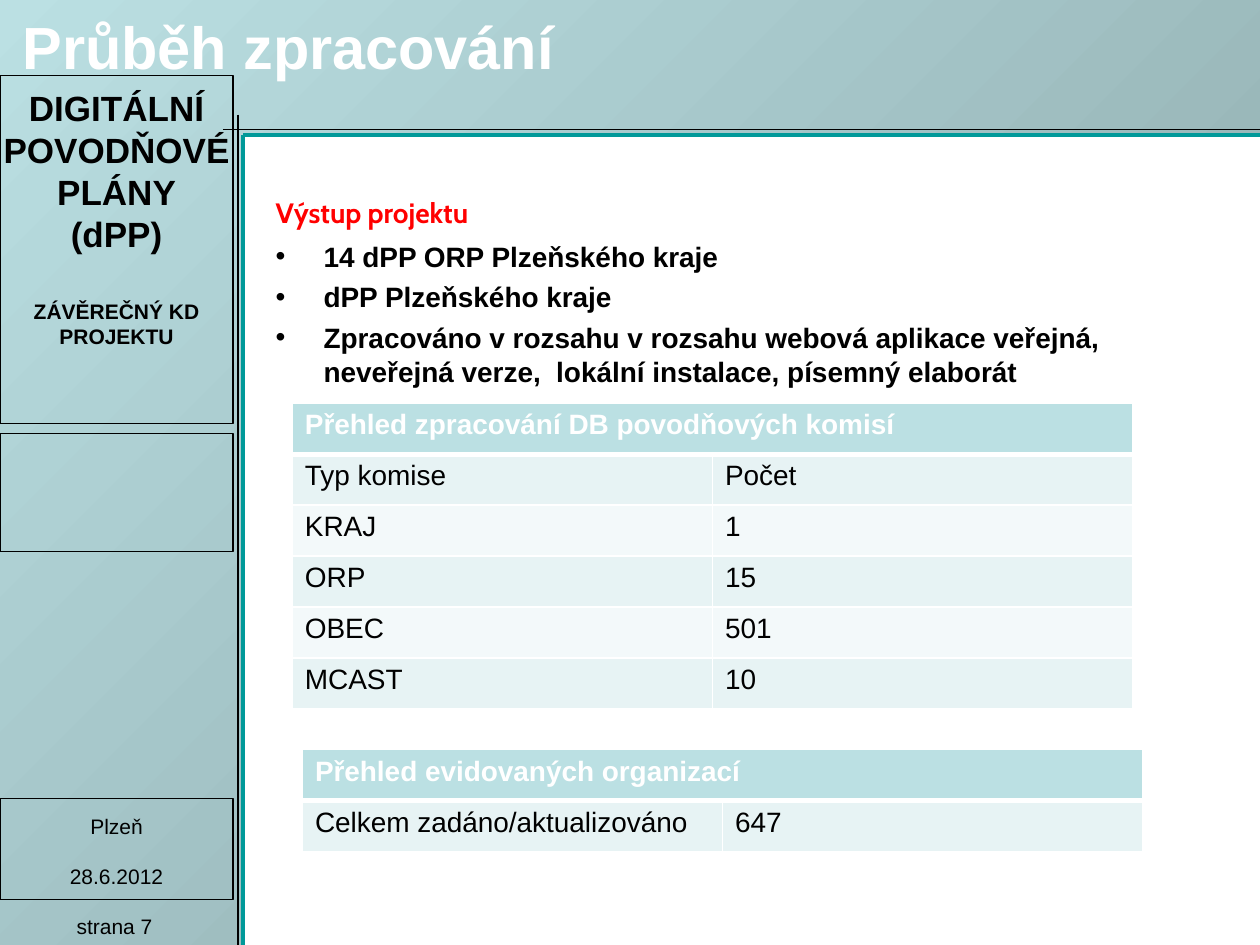
from lxml import etree
from pptx import Presentation
from pptx.dml.color import RGBColor
from pptx.enum.shapes import MSO_CONNECTOR, MSO_SHAPE
from pptx.enum.text import PP_ALIGN
from pptx.oxml.ns import qn
from pptx.util import Inches, Pt

STRAIGHT = MSO_CONNECTOR.STRAIGHT
RECTANGLE = MSO_SHAPE.RECTANGLE
CENTER = PP_ALIGN.CENTER

BLACK = RGBColor(0x00, 0x00, 0x00)
WHITE = RGBColor(0xFF, 0xFF, 0xFF)
RED = RGBColor(0xFF, 0x00, 0x00)
TEAL = RGBColor(0x00, 0x99, 0x99)
AQUA = RGBColor(0xBB, 0xE0, 0xE3)
SLATE = RGBColor(0x86, 0xA0, 0xA2)
BAND_DARK = RGBColor(0xE7, 0xF3, 0xF4)
BAND_LIGHT = RGBColor(0xF3, 0xF9, 0xFA)

FRAME_OUTLINE = [(-0.04, 7.53), (1.93, 7.53), (1.93, 1.08),
                 (10.04, 1.08), (10.04, -0.03), (-0.04, -0.03)]
RULES = [
    (1.93, 7.5, 1.93, 1.07, TEAL, 2.25),
    (1.93, 1.07, 10, 1.07, TEAL, 2.25),
    (1.89, 0.91, 1.89, 7.5, BLACK, 0.75),
    (1.77, 1.03, 10, 1.03, BLACK, 0.75),
]
SIDE_BOXES = [(0.6, 2.76), (3.44, 0.94), (6.34, 0.8)]

HEADING = {"size": Pt(20), "bold": True}
SUBHEADING = {"size": Pt(12), "bold": True}
SMALL = {"size": Pt(12)}
TITLE = {"size": Pt(34), "bold": True, "color": WHITE}
OUTPUT = {"size": Pt(16), "bold": True, "name": "Cabin", "color": RED}
BULLET = {"size": Pt(16), "bold": True}
CELL = {"size": Pt(16)}
HEADER_CELL = {"size": Pt(16), "bold": True, "color": WHITE}

COMMISSIONS = [
    ("Přehled zpracování DB povodňových komisí", ""),
    ("Typ komise", "Počet"),
    ("KRAJ", "1"),
    ("ORP", "15"),
    ("OBEC", "501"),
    ("MCAST", "10"),
]
ORGANIZATIONS = [
    ("Přehled evidovaných organizací", ""),
    ("Celkem zadáno/aktualizováno", "647"),
]
BULLETS = [
    "14 dPP ORP Plzeňského kraje",
    "dPP Plzeňského kraje",
    "Zpracováno v rozsahu v rozsahu webová aplikace veřejná, "
    "neveřejná verze,  lokální instalace, písemný elaborát",
]


def format_font(font, values):
    settings = {"name": "Arial", "color": BLACK, **values}
    font.color.rgb = settings.pop("color")
    for name, value in settings.items():
        setattr(font, name, value)


def add_bullet(paragraph):
    properties = paragraph._p.get_or_add_pPr()
    properties.set("marL", str(Inches(0.38)))
    properties.set("indent", str(-Inches(0.38)))
    etree.SubElement(properties, qn("a:buFont"), typeface="Arial")
    etree.SubElement(properties, qn("a:buChar"), char="•")


def add_text(slide, box, items, margin_top=0.05, wrap=True):
    shape = slide.shapes.add_textbox(*map(Inches, box))
    frame = shape.text_frame
    frame.word_wrap = wrap
    frame.margin_top = Inches(margin_top)
    for index, (text, font, layout) in enumerate(items):
        paragraph = frame.paragraphs[0] if index == 0 else frame.add_paragraph()
        settings = dict(layout)
        if settings.pop("bullet", False):
            add_bullet(paragraph)
        for name, value in settings.items():
            setattr(paragraph, name, value)
        run = paragraph.add_run()
        run.text = text
        format_font(run.font, font)


def add_frame(slide):
    points = [(Inches(x), Inches(y)) for x, y in FRAME_OUTLINE]
    builder = slide.shapes.build_freeform(*points[0])
    builder.add_line_segments(points[1:], close=True)
    shape = builder.convert_to_shape()
    shape.shadow.inherit = False
    shape.line.fill.background()
    shape.fill.gradient()
    shape.fill.gradient_angle = 315
    for stop, color, position in zip(shape.fill.gradient_stops, (AQUA, SLATE), (0, 1)):
        stop.color.rgb = color
        stop.position = position


def add_rule(slide, x1, y1, x2, y2, color, width):
    ends = map(Inches, (x1, y1, x2, y2))
    connector = slide.shapes.add_connector(STRAIGHT, *ends)
    connector.line.color.rgb = color
    connector.line.width = Pt(width)
    etree.SubElement(connector._element.spPr, qn("a:effectLst"))


def add_side_box(slide, top, height):
    shape = slide.shapes.add_shape(RECTANGLE, 0, Inches(top), Inches(1.85), Inches(height))
    shape.shadow.inherit = False
    shape.fill.background()
    shape.line.color.rgb = BLACK
    shape.line.width = Pt(0.75)


def add_borders(cell, top, bottom):
    properties = cell._tc.get_or_add_tcPr()
    for side, width in {"lnL": 1, "lnR": 1, "lnT": top, "lnB": bottom}.items():
        line = etree.SubElement(properties, qn(f"a:{side}"), w=str(Pt(width)))
        fill = etree.SubElement(line, qn("a:solidFill"))
        etree.SubElement(fill, qn("a:srgbClr"), val=str(WHITE))


def add_summary_table(slide, box, rows):
    table = slide.shapes.add_table(len(rows), 2, *map(Inches, box)).table
    table.first_row = False
    table.horz_banding = False
    table.cell(0, 0).merge(table.cell(0, 1))
    for row, values in enumerate(rows):
        color = AQUA if row == 0 else BAND_DARK if row % 2 else BAND_LIGHT
        for column, value in enumerate(values):
            cell = table.cell(row, column)
            add_borders(cell, 3 if row == 1 else 1, 3 if row == 0 else 1)
            cell.fill.solid()
            cell.fill.fore_color.rgb = color
            if value:
                run = cell.text_frame.paragraphs[0].add_run()
                run.text = value
                format_font(run.font, HEADER_CELL if row == 0 else CELL)


def main():
    presentation = Presentation()
    presentation.slide_width = Inches(10)
    presentation.slide_height = Inches(7.5)
    slide = presentation.slides.add_slide(presentation.slide_layouts[6])

    add_frame(slide)
    add_text(slide, (-0.1, 0.64, 2.05, 2.2), [
        ("DIGITÁLNÍ POVODŇOVÉ PLÁNY", HEADING, {"alignment": CENTER}),
        ("(dPP)", HEADING, {"alignment": CENTER}),
        ("ZÁVĚREČNÝ KD PROJEKTU", SUBHEADING,
         {"alignment": CENTER, "space_before": Pt(25)}),
    ])
    add_text(slide, (-0.06, 6.19, 1.97, 0.92), [
        ("Plzeň", SMALL, {"alignment": CENTER}),
        ("28.6.2012", SMALL, {"alignment": CENTER, "space_before": Pt(14)}),
    ], margin_top=0.27)
    add_text(slide, (0.51, 7.22, 0.91, 0.28),
             [("strana 7", SMALL, {"line_spacing": 0.9})], wrap=False)
    for rule in RULES:
        add_rule(slide, *rule)
    for top, height in SIDE_BOXES:
        add_side_box(slide, top, height)

    add_text(slide, (0.08, 0, 10.97, 1.11),
             [("Průběh zpracování", TITLE, {})], margin_top=0.08)
    bullet_layout = {"bullet": True, "space_before": Pt(4)}
    add_text(slide, (2.09, 1.27, 7.44, 2.09),
             [("Výstup projektu", OUTPUT, {"space_after": Pt(2)})]
             + [(text, BULLET, bullet_layout) for text in BULLETS], margin_top=0.28)
    add_summary_table(slide, (2.32, 3.2, 6.67, 2.43), COMMISSIONS)
    add_summary_table(slide, (2.4, 5.95, 6.67, 0.81), ORGANIZATIONS)
    presentation.save("out.pptx")


if __name__ == "__main__":
    main()
